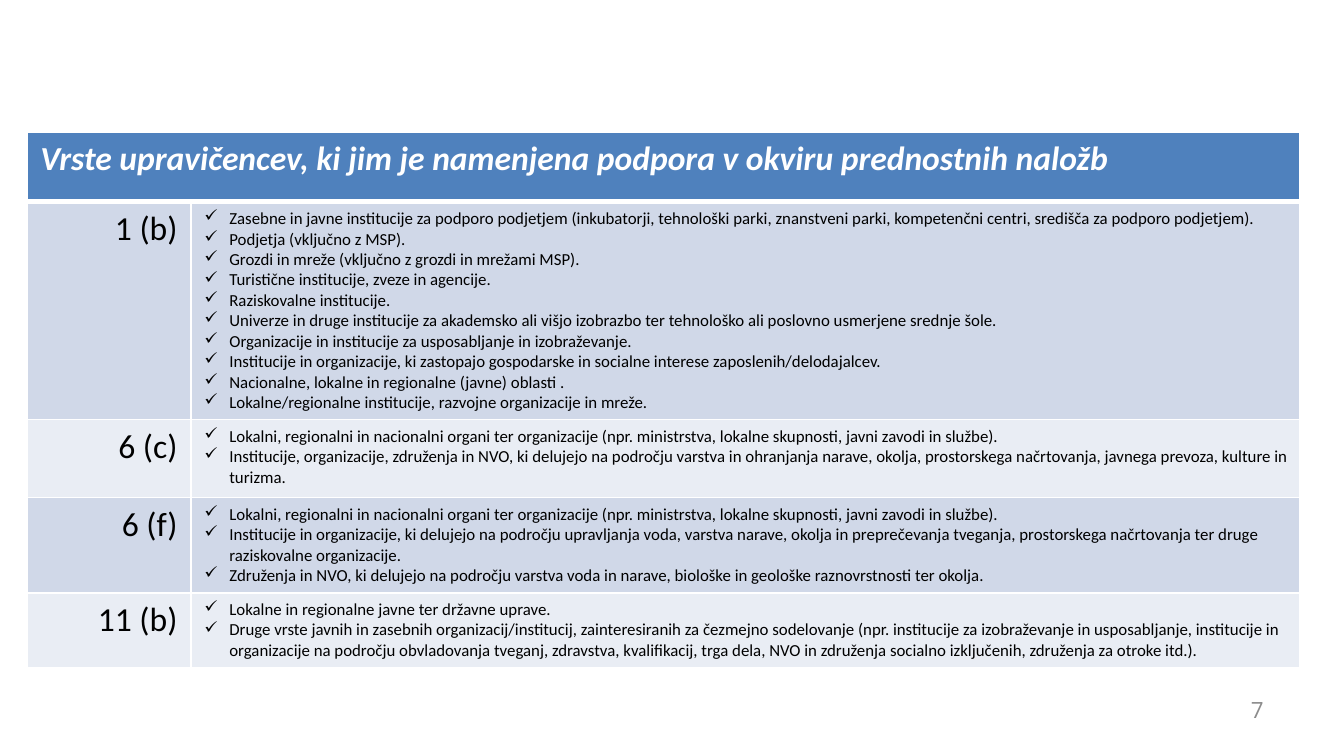
from dataclasses import dataclass
from pptx import Presentation as Deck
from pptx.dml.color import RGBColor as Rgb
from pptx.enum.text import MSO_ANCHOR as Anchor, PP_ALIGN as Align
from pptx.oxml.ns import qn
from pptx.util import Emu, Pt
from lxml.etree import SubElement as Sub


@dataclass(frozen=True)
class Theme:
    face: str = "Calibri"
    page_face: str = "Open Sans"
    white: str = "FFFFFF"
    black: str = "000000"
    blue: str = "4F81BD"
    bands: tuple = ("D0D8E8", "E9EDF4")
    gray: str = "8C8C8C"
    big: int = 18
    small: int = 9
    page: int = 12


theme = Theme()


def px(n):
    return Emu(round(n * 914400 / 134.4))


def style(para, size, color, face=theme.face, bold=False):
    for run in para.runs:
        font = run.font
        font.name, font.size = face, Pt(size)
        font.bold = font.italic = bold
        font.color.rgb = Rgb.from_string(color)


title = "Vrste upravičencev, ki jim je namenjena podpora v okviru prednostnih naložb"
local = "Lokalni, regionalni in nacionalni organi ter organizacije (npr. ministrstva, lokalne skupnosti, javni zavodi in službe)."
groups = [
    ("1 (b)", 217, [
        "Zasebne in javne institucije za podporo podjetjem (inkubatorji, tehnološki parki, znanstveni parki, kompetenčni centri, središča za podporo podjetjem).",
        "Podjetja (vključno z MSP).",
        "Grozdi in mreže (vključno z grozdi in mrežami MSP).",
        "Turistične institucije, zveze in agencije.",
        "Raziskovalne institucije.",
        "Univerze in druge institucije za akademsko ali višjo izobrazbo ter tehnološko ali poslovno usmerjene srednje šole.",
        "Organizacije in institucije za usposabljanje in izobraževanje.",
        "Institucije in organizacije, ki zastopajo gospodarske in socialne interese zaposlenih/delodajalcev.",
        "Nacionalne, lokalne in regionalne (javne) oblasti .",
        "Lokalne/regionalne institucije, razvojne organizacije in mreže.",
    ]),
    ("6 (c)", 78, [
        local,
        "Institucije, organizacije, združenja in NVO, ki delujejo na področju varstva in ohranjanja narave, okolja, prostorskega načrtovanja, javnega prevoza, kulture in turizma.",
    ]),
    ("6 (f)", 94, [
        local,
        "Institucije in organizacije, ki delujejo na področju upravljanja voda, varstva narave, okolja in preprečevanja tveganja, prostorskega načrtovanja ter druge raziskovalne organizacije.",
        "Združenja in NVO, ki delujejo na področju varstva voda in narave, biološke in geološke raznovrstnosti ter okolja.",
    ]),
    ("11 (b)", 75, [
        "Lokalne in regionalne javne ter državne uprave.",
        "Druge vrste javnih in zasebnih organizacij/institucij, zainteresiranih za čezmejno sodelovanje (npr. institucije za izobraževanje in usposabljanje, institucije in organizacije na področju obvladovanja tveganj, zdravstva, kvalifikacij, trga dela, NVO in združenja socialno izključenih, združenja za otroke itd.).",
    ]),
]

deck = Deck()
deck.slide_width, deck.slide_height = px(1344), px(756)
slide = deck.slides.add_slide(deck.slide_layouts[6])

heights = [70] + [high for _, high, _ in groups]
frame = slide.shapes.add_table(len(heights), 2, px(27), px(132), px(1273), px(sum(heights)))
table = frame.table
table.horz_banding = False
for col, wide in zip(table.columns, (164, 1109)):
    col.width = px(wide)

for i, high in enumerate(heights):
    table.rows[i].height = px(high)
    for cell in table.rows[i].cells:
        props = cell._tc.get_or_add_tcPr()
        for side in "LRTB":
            thick = (i == 0 and side == "B") or (i == 1 and side == "T")
            line = Sub(props, qn(f"a:ln{side}"), w=str(Pt(3 if thick else 1)))
            Sub(Sub(line, qn("a:solidFill")), qn("a:srgbClr"), val=theme.white)
        cell.fill.solid()
        fill = theme.bands[(i - 1) % 2] if i else theme.blue
        cell.fill.fore_color.rgb = Rgb.from_string(fill)

head = table.cell(0, 0)
head.merge(table.cell(0, 1))
head.text_frame.text = title
style(head.text_frame.paragraphs[0], theme.big, theme.white, bold=True)

for i, (code, _, items) in enumerate(groups, 1):
    label = table.cell(i, 0).text_frame
    label.text = code
    label.paragraphs[0].alignment = Align.RIGHT
    style(label.paragraphs[0], theme.big, theme.black)

    body = table.cell(i, 1).text_frame
    body.text = "\n".join(items)
    for para in body.paragraphs:
        props = para._p.get_or_add_pPr()
        props.set("marL", str(px(25)))
        props.set("indent", str(-px(25)))
        Sub(props, qn("a:buChar"), char="✓")
        style(para, theme.small, theme.black)

page = slide.shapes.add_textbox(px(964), px(690), px(313), px(40)).text_frame
page.word_wrap = True
page.vertical_anchor = Anchor.MIDDLE
page.text = "7"
page.paragraphs[0].alignment = Align.RIGHT
style(page.paragraphs[0], theme.page, theme.gray, theme.page_face)

deck.save("out.pptx")
